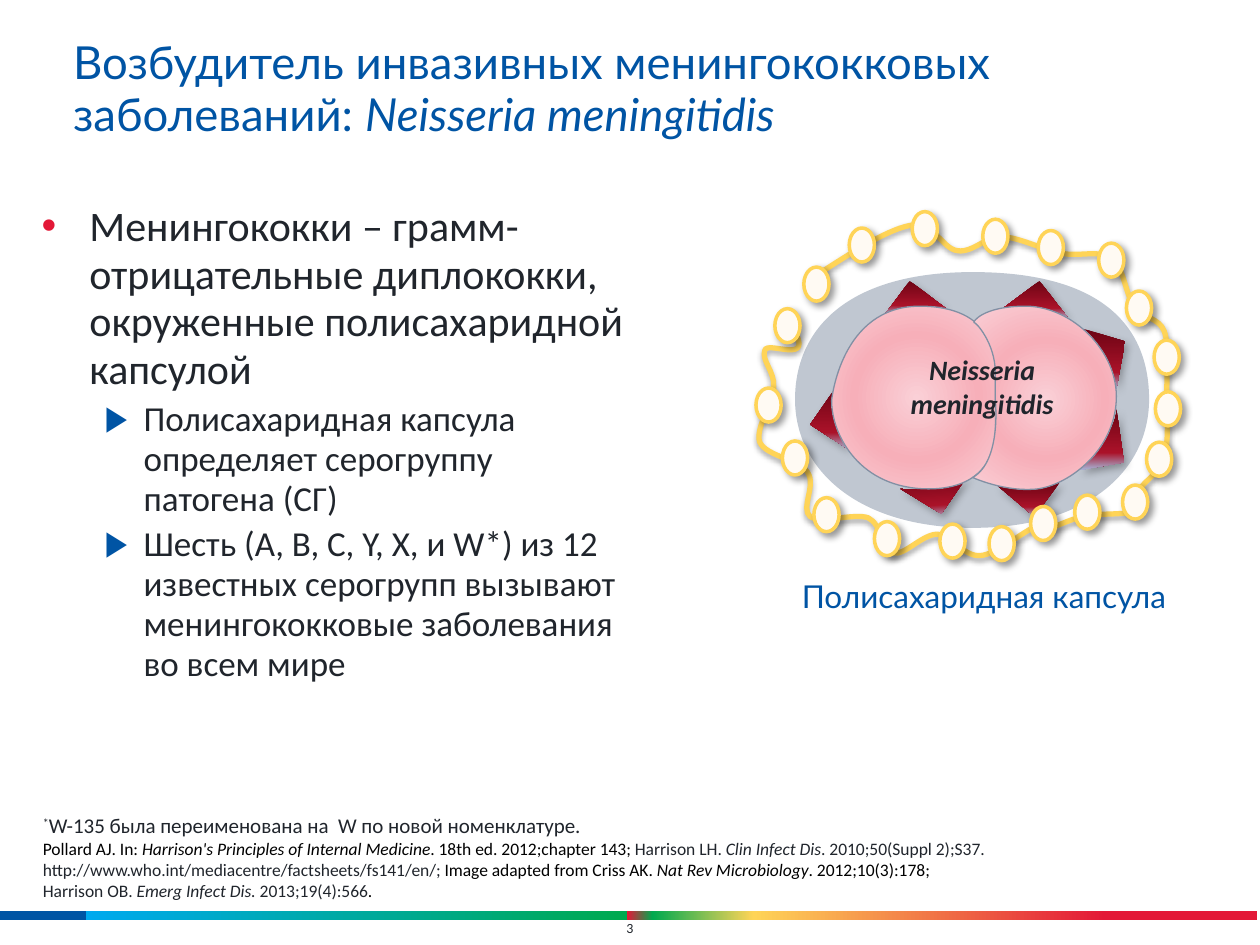
"""Build the slide on the meningococcal pathogen and its capsule."""
from lxml import etree
from pptx import Presentation
from pptx import util as u
from pptx.dml.color import RGBColor
from pptx.enum import shapes, text
from pptx.oxml.ns import qn

COLUMNS, ROWS = 100, 75
UNIT = u.Inches(10) / COLUMNS
COLOURS = {
    "blue": "0054A4", "sky": "00A9EF", "green": "00A94F", "red": "E31837", "yellow": "FFD457",
    "ink": "20252C", "black": "000000", "grey": "C0C7D1", "slate": "8190A4", "cream": "FFFAF3",
    "wine": "6C0414", "crimson": "AA1229", "mist": "A6B4D7", "blush": "FAD0D7", "pink": "F7AFB9",
}
BAR_STOPS = [(7, "blue"), (7, "sky"), (50, "green"), (50, "red"), (52, "green"),
             (60, "yellow"), (88, "red")]
SPIKE_STOPS = [(0, "wine"), (72, "crimson"), (100, "mist")]
COCCUS_STOPS = [(0, "blush"), (50, "pink"), (100, "blush")]
CAPSULE_SHADOW, SPIKE_SHADOW, BEAD_SHADOW = (35, 3.1, 1.8, 90), (30, 4.5, 2.6, 53), (40, 4, 3, 45)

HALO = [(91.2, 31.7), (91.2, 37.3, 86.4, 41.9, 77.2, 41.9), (68.1, 41.9, 63.1, 37.3, 63.1, 31.7),
        (63.1, 26.1, 67.3, 21.6, 77.2, 21.6), (87.7, 21.6, 91.2, 26.1, 91.2, 31.7)]
CAPSULE = [
    (64.1, 22.3), (67.2, 20.3, 70.2, 18.3, 72.2, 17.9), (74.1, 17.5, 74.8, 19.8, 76, 19.9),
    (77.2, 20.1, 78.1, 18.8, 79.5, 18.8), (80.8, 18.8, 82.7, 19.8, 84.2, 20.1),
    (85.7, 20.4, 87.2, 19.8, 88.2, 20.5), (89.2, 21.2, 89.3, 23.3, 90, 24.3),
    (90.7, 25.3, 92, 25.2, 92.4, 26.3), (92.8, 27.4, 92.6, 29.4, 92.6, 31.1),
    (92.6, 32.7, 92.8, 34.9, 92.4, 36.2), (92.1, 37.5, 90.8, 38.2, 90.4, 38.9),
    (90, 39.7, 90.6, 40.3, 89.9, 40.6), (89.1, 40.9, 87.2, 40.7, 86, 41),
    (84.9, 41.2, 83.6, 41.9, 82.9, 42.1), (82.3, 42.2, 82.9, 41.5, 82, 41.9),
    (81.2, 42.2, 79.1, 44, 77.8, 44.1), (76.5, 44.2, 75.5, 42.5, 74.4, 42.4),
    (73.2, 42.4, 71.8, 44.1, 70.9, 43.9), (70, 43.7, 70, 41.6, 68.9, 41.1),
    (67.8, 40.7, 65.1, 41.6, 64.3, 41), (63.5, 40.4, 64.8, 38.5, 64.1, 37.5),
    (63.5, 36.5, 60.8, 36.2, 60.3, 35.1), (59.9, 34, 61.4, 31.9, 61.4, 30.7),
    (61.5, 29.5, 60.4, 28.6, 60.7, 27.8), (60.9, 27, 64.8, 29.1, 62.9, 26)]
SPIKES = [
    (0, [(79.7, 24.4), (82.5, 22.3), (84.8, 25.3), (84.8, 25.3, 82.9, 23.9, 79.7, 24.4)]),
    (0, [(86, 26.1), (86, 26.1, 88.5, 28.5, 88.6, 30.9), (89.3, 27.1)]),
    (0, [(88.6, 32.4), (89.2, 36.7), (85.7, 37.3), (85.7, 37.3, 88.7, 34.4, 88.6, 32.4)]),
    (0, [(79.1, 38.5), (82.1, 41), (84.1, 38.3), (84.1, 38.3, 82.1, 39.3, 79.1, 38.5)]),
    (0, [(75.1, 24.5), (72.2, 22.3), (70.2, 25), (70.2, 25, 72.6, 23.8, 75.1, 24.5)]),
    (-4.1, [(77.1, 37.7), (74.6, 40.8), (71.5, 38.6), (71.5, 38.6, 75.8, 39.2, 77.1, 37.7)]),
    (0, [(66.3, 30.8), (64.3, 33.7), (67.4, 35.7), (67.4, 35.7, 65.8, 33.9, 66.3, 30.8)])]
COCCI = [
    [(66, 31.8), (66, 31.8, 66.7, 24.3, 73, 24.3), (78.9, 24.3, 79, 28.4, 79, 29.4),
     (79, 30.4, 79, 30.5, 79, 33.9), (79, 33.9, 79.5, 38.8, 73.7, 38.8),
     (68.2, 38.8, 66, 34.5, 66, 31.8)],
    [(79, 31.8), (79, 31.8, 79.5, 36.6, 77.2, 37.9), (77.2, 37.9, 79.8, 39.1, 82.4, 38.8),
     (85, 38.4, 88.4, 35.7, 88.6, 31.8), (88.8, 27.9, 85.1, 24.3, 81.4, 24.3),
     (77.9, 24.3, 77.2, 25.6, 77.3, 25.6), (77.4, 25.5, 79, 27.2, 79, 29.6)]]
BEADS = [
    (67.4, 18.1), (72.4, 16.8), (78, 17.4), (82.4, 18.3), (87.2, 19.3), (89.4, 23.1), (91.6, 27),
    (91.7, 31.1), (91, 35.1), (89.1, 38.5), (85.3, 39.3), (81.8, 40.2), (78.5, 41.8),
    (74.6, 41.6), (69.4, 41.4), (64.6, 39.5), (62.1, 35), (60, 30.8), (63.8, 21.2), (61.5, 24.5)]

BULLETS = [
    (0, "Менингококки – грамм-отрицательные диплококки, окруженные полисахаридной капсулой"),
    (1, "Полисахаридная капсула определяет серогруппу патогена (СГ)"),
    (1, "Шесть (A, B, C, Y, X, и W*) из 12 известных серогрупп вызывают "
        "менингококковые заболевания во всем мире")]
BULLET_LEVELS = [("•", "red", 24, 0, 0.38, 0.38), ("▶", "blue", 20, 3, 0.81, 0.31)]
SOURCES = [
    [("Pollard AJ. In: ", "black", False),
     ("Harrison's Principles of Internal Medicine", "black", True),
     (". 18th ed. 2012;chapter 143; ", "black", False), ("Harrison LH. ", "ink", False),
     ("Clin Infect Dis", "ink", True),
     (". 2010;50(Suppl 2);S37. http://www.who.int/mediacentre/factsheets/fs141/en/; ", "ink", False),
     ("Image adapted from Criss AK. ", "black", False), ("Nat Rev Microbiology", "black", True),
     (". 2012;10(3):178; ", "black", False)],
    [("Harrison OB. ", "ink", False), ("Emerg Infect Dis. ", "ink", True),
     ("2013;19(4):566", "ink", False), (".", "black", False)]]


def grid(*cells):
    """Turn grid units into slide lengths."""
    return [u.Emu(round(cell * UNIT)) for cell in cells]


def add_node(parent, tag, **attributes):
    """Append a drawing element with the given attributes."""
    return etree.SubElement(parent, qn("a:" + tag), {k: str(v) for k, v in attributes.items()})


def paint_gradient(shape, stops, radial=False):
    """Fill a shape with a gradient of several stops."""
    shape.fill.gradient()
    gradient = shape._element.spPr.find(qn("a:gradFill"))
    for child in list(gradient):
        gradient.remove(child)
    stop_list = add_node(gradient, "gsLst")
    for share, colour in stops:
        add_node(add_node(stop_list, "gs", pos=share * 1000), "srgbClr", val=COLOURS[colour])
    if radial:
        ring = add_node(gradient, "path", path="circle")
        add_node(ring, "fillToRect", l=50000, t=50000, r=50000, b=50000)
    else:
        angle = 0 if shape.width > 20 * shape.height else 90
        add_node(gradient, "lin", ang=angle * 60000, scaled=0)


def style(shape, fill=None, stops=None, radial=False, line=None, weight=0, shadow=None):
    """Set the fill, outline and shadow of a shape."""
    if stops:
        paint_gradient(shape, stops, radial)
    elif fill:
        shape.fill.solid()
        shape.fill.fore_color.rgb = RGBColor.from_string(COLOURS[fill])
    else:
        shape.fill.background()
    if line:
        shape.line.color.rgb = RGBColor.from_string(COLOURS[line])
        shape.line.width = u.Pt(weight)
    else:
        shape.line.fill.background()
    shape.shadow.inherit = False
    if shadow:
        alpha, blur, distance, angle = shadow
        effects = shape._element.spPr.find(qn("a:effectLst"))
        cast = add_node(effects, "outerShdw", blurRad=u.Pt(blur), dist=u.Pt(distance),
                        dir=angle * 60000, algn="ctr", rotWithShape=0)
        add_node(add_node(cast, "srgbClr", val=COLOURS["black"]), "alpha", val=alpha * 1000)


def add_outline(canvas, outline, close=True, turn=0, **look):
    """Draw a styled freeform of straight lines and Bezier curves."""
    start, *rest = outline
    builder = canvas.build_freeform(*grid(*start), scale=1.0)
    points = [grid(*part[i:i + 2]) for part in rest for i in range(0, len(part), 2)]
    builder.add_line_segments(points, close=close)
    shape = builder.convert_to_shape()
    segments = iter(list(shape._element.iter(qn("a:lnTo"))))
    for part in rest:
        segment = next(segments)
        if len(part) == 6:
            segment.tag = qn("a:cubicBezTo")
            for extra in (next(segments), next(segments)):
                segment.append(extra[0])
                extra.getparent().remove(extra)
    shape.rotation = turn
    style(shape, **look)


def add_box(canvas, cells, anchor=text.MSO_ANCHOR.TOP, wrap=True, inset=0):
    """Add a text box and return its frame."""
    frame = canvas.add_textbox(*grid(*cells)).text_frame
    frame.word_wrap = wrap
    frame.vertical_anchor = anchor
    frame.margin_left = frame.margin_right = u.Inches(inset)
    frame.margin_top = frame.margin_bottom = u.Inches(inset / 2)
    return frame


def add_span(para, words, size, colour="ink", font="Calibri", bold=False, italic=False):
    """Add one formatted run."""
    span = para.add_run()
    span.text = words
    span.font.size, span.font.name = u.Pt(size), font
    span.font.bold, span.font.italic = bold, italic
    span.font.color.rgb = RGBColor.from_string(COLOURS[colour])
    return span


def add_bullets(page):
    """Write the bulleted list."""
    frame = add_box(page.shapes, (3.3, 16.1, 46.7, 49.5))
    for index, (level, words) in enumerate(BULLETS):
        para = frame.add_paragraph() if index else frame.paragraphs[0]
        mark, colour, size, before, margin, hang = BULLET_LEVELS[level]
        properties = para._p.get_or_add_pPr()
        properties.set("marL", str(u.Inches(margin)))
        properties.set("indent", str(-u.Inches(hang)))
        add_node(add_node(properties, "buClr"), "srgbClr", val=COLOURS[colour])
        add_node(properties, "buFont", typeface="Arial")
        add_node(properties, "buChar", char=mark)
        para.level, para.line_spacing = level, 0.95
        if index:
            para.space_before = u.Pt(before)
        add_span(para, words, size)


def add_sources(page):
    """Write the footnote and the references."""
    para = add_box(page.shapes, (3.4, 64.6, 95.2, 6.9), text.MSO_ANCHOR.BOTTOM).paragraphs[0]
    star = add_span(para, "*", 12)
    star._r.get_or_add_rPr().set("baseline", "30000")
    add_span(para, "W-135 была переименована на  W по новой номенклатуре.", 12)
    for line in SOURCES:
        para.add_line_break()
        for words, colour, italic in line:
            add_span(para, words, 10, colour, italic=italic)


def add_bacterium(page):
    """Draw the diplococcus inside its capsule."""
    canvas = page.shapes.add_group_shape().shapes
    add_outline(canvas, HALO, fill="grey")
    add_outline(canvas, CAPSULE, close=False, line="yellow", weight=3, shadow=CAPSULE_SHADOW)
    for turn, outline in SPIKES:
        add_outline(canvas, outline, turn=turn, stops=SPIKE_STOPS, shadow=SPIKE_SHADOW)
    for outline in COCCI:
        add_outline(canvas, outline, stops=COCCUS_STOPS, radial=True, line="slate", weight=0.75)
    frame = add_box(canvas, (71.2, 27.5, 14, 6.4), wrap=False, inset=0.1)
    for para, words in zip((frame.paragraphs[0], frame.add_paragraph()),
                           ("Neisseria ", "meningitidis ")):
        para.alignment = text.PP_ALIGN.CENTER
        add_span(para, words, 16, bold=True, italic=True)
    for left, top in BEADS:
        bead = canvas.add_shape(shapes.MSO_SHAPE.OVAL, *grid(left, top, 2, 2.7))
        style(bead, fill="cream", line="yellow", weight=2, shadow=BEAD_SHADOW)


def main():
    """Build and save the deck."""
    deck = Presentation()
    deck.slide_width, deck.slide_height = grid(COLUMNS, ROWS)
    page = deck.slides.add_slide(deck.slide_layouts[6])
    bar = page.shapes.add_shape(shapes.MSO_SHAPE.RECTANGLE, *grid(-0.2, 72.3, COLUMNS, 0.7))
    style(bar, stops=BAR_STOPS)
    number = add_box(page.shapes, (49, 73, 2, 1.3), text.MSO_ANCHOR.BOTTOM).paragraphs[0]
    number.alignment = text.PP_ALIGN.CENTER
    add_span(number, "3", 8)
    title = add_box(page.shapes, (5.8, 3, 87.9, 10.5)).paragraphs[0]
    title.line_spacing = 0.95
    add_span(title, "Возбудитель инвазивных менингококковых заболеваний: ", 26, "blue", "Lato")
    add_span(title, "Neisseria meningitidis", 26, "blue", "Lato", italic=True)
    add_bullets(page)
    caption = add_box(page.shapes, (60.4, 45.3, 35.4, 4), inset=0.1).paragraphs[0]
    caption.alignment = text.PP_ALIGN.CENTER
    add_span(caption, "Полисахаридная капсула", 18, "blue", "Lato")
    add_sources(page)
    add_bacterium(page)
    deck.save("out.pptx")


if __name__ == "__main__":
    main()
